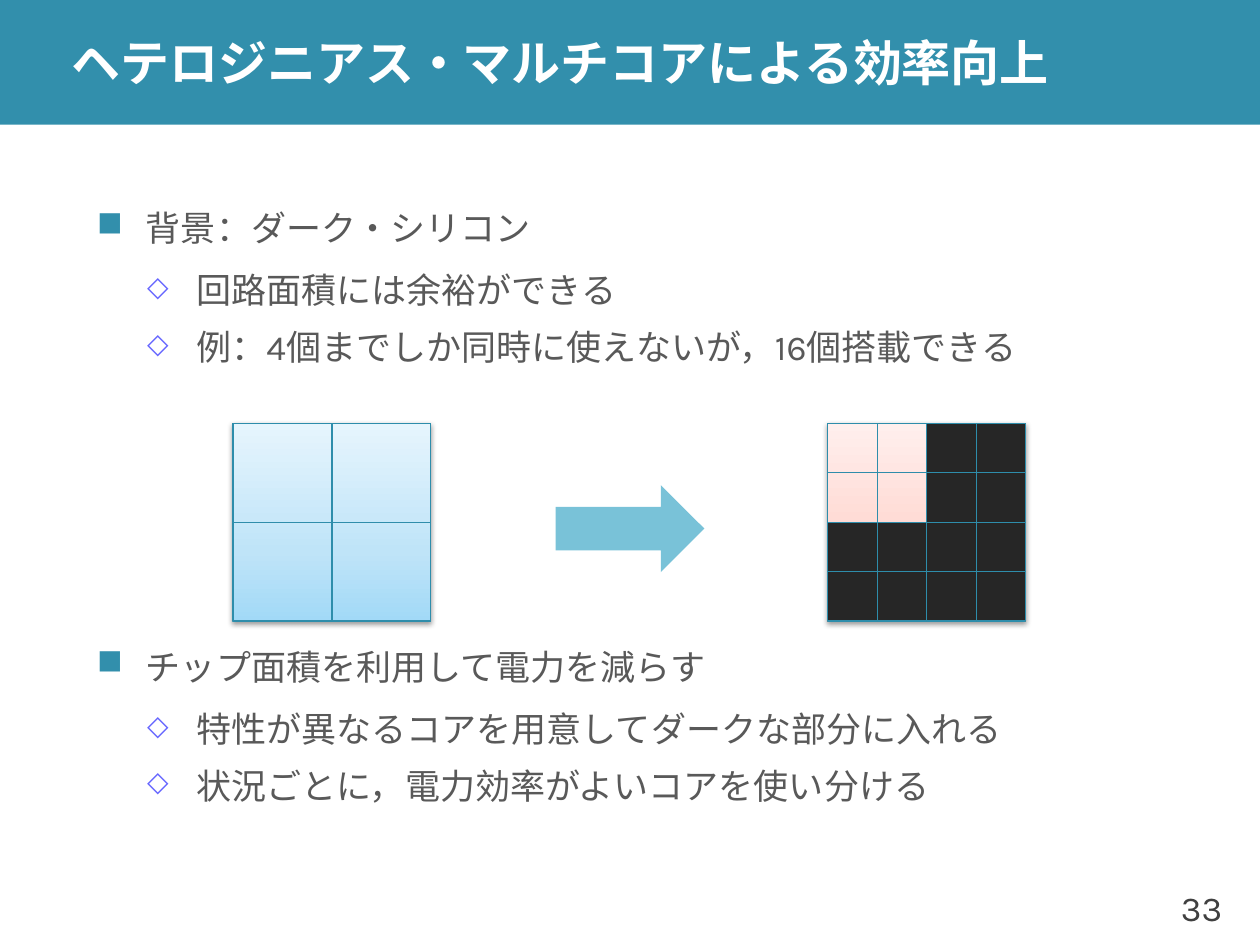
import pptx
import pptx.util
import pptx.oxml
import pptx.oxml.ns
from pptx.dml.color import RGBColor
from pptx.enum.shapes import MSO_SHAPE
from pptx.enum.text import MSO_ANCHOR, PP_ALIGN
from pptx.util import Inches

FONT = "Karla"
COLORS = {
    "teal": "328FAC", "grid": "2E8DAB", "arrow": "79C2D8", "orange": "F4652F",
    "dark": "262626", "body": "595959", "number": "404040", "white": "FFFFFF",
    "diamond": "6666FF",
}
TITLE = "ヘテロジニアス・マルチコアによる効率向上"
PAGE_NUMBER = "33"
# top of each group, heading, points
GROUPS = [
    (1.61, "背景：ダーク・シリコン",
     ["回路面積には余裕ができる",
      "例：4個までしか同時に使えないが，16個搭載できる"]),
    (5.09, "チップ面積を利用して電力を減らす",
     ["特性が異なるコアを用意してダークな部分に入れる",
      "状況ごとに，電力効率がよいコアを使い分ける"]),
]
CHIP_TOP, CHIP_SIZE, LIT_PER_SIDE = 3.36, 1.57, 2
# left, cores per side, outline, gradient from bottom to top
CHIPS = [
    (1.85, 2, "grid", [(0, "A2D9F7"), (35, "BFE4F8"), (100, "E6F5FD")]),
    (6.57, 4, "orange", [(0, "FFC3BA"), (35, "FFD5CE"), (100, "FFEFED")]),
]
HEADING = dict(bullet="■", bullet_color="teal", indent=0.39, after=6)
POINT = dict(bullet="◇", bullet_color="diamond", bullet_size=80,
             indent=0.79, level=1, before=3, after=3)
HANGING = 0.39


def rgb(name):
    return RGBColor.from_string(COLORS[name])


def add_xml(parent, xml):
    """Append DrawingML given with the a: prefix."""
    head, rest = xml.split(">", 1) if not xml.split(">", 1)[0].endswith("/") else (xml[:-2], None)
    declared = f"{head} {pptx.oxml.ns.nsdecls('a')}"
    parent.append(pptx.oxml.parse_xml(declared + ("/>" if rest is None else ">" + rest)))


def text_frame(slide, left, top, width, height, anchor, margin=0.0, wrap=True):
    frame = slide.shapes.add_textbox(*map(Inches, (left, top, width, height))).text_frame
    frame.word_wrap = wrap
    frame.vertical_anchor = anchor
    frame.margin_left = frame.margin_right = Inches(margin)
    frame.margin_top = frame.margin_bottom = 0
    return frame


def write(frame, text, size=20, color="body", bold=False, align=PP_ALIGN.LEFT,
          bullet=None, bullet_color=None, bullet_size=100, indent=0, level=0,
          spacing=1.0, before=0, after=0):
    paragraph = frame.paragraphs[0]
    if paragraph.runs:
        paragraph = frame.add_paragraph()
    paragraph.alignment = align
    paragraph.level = level
    paragraph.line_spacing = spacing
    paragraph.space_before = pptx.util.Pt(before)
    paragraph.space_after = pptx.util.Pt(after)
    if bullet:
        properties = paragraph._p.get_or_add_pPr()
        properties.set("marL", str(Inches(indent)))
        properties.set("indent", str(-Inches(HANGING)))
        add_xml(properties, f'<a:buClr><a:srgbClr val="{COLORS[bullet_color]}"/></a:buClr>')
        add_xml(properties, f'<a:buSzPct val="{bullet_size * 1000}"/>')
        add_xml(properties, f'<a:buChar char="{bullet}"/>')
    run = paragraph.add_run()
    run.text = text
    run.font.name = FONT
    run.font.size = pptx.util.Pt(size)
    run.font.bold = bold
    run.font.color.rgb = rgb(color)
    add_xml(run._r.get_or_add_rPr(), f'<a:ea typeface="{FONT}"/>')


def add_block(slide, left, top, width, height, fill=None, line=None,
              kind=MSO_SHAPE.RECTANGLE):
    block = slide.shapes.add_shape(kind, *map(Inches, (left, top, width, height)))
    block.shadow.inherit = False
    if fill:
        block.fill.solid()
        block.fill.fore_color.rgb = rgb(fill)
    else:
        block.fill.background()
    if line:
        block.line.color.rgb = rgb(line)
        block.line.width = pptx.util.Pt(0.75)
    else:
        block.line.fill.background()
    return block


def shade(block, stops):
    """Give a block a vertical gradient and a soft shadow below it."""
    block.fill.gradient()
    gradient = block._element.spPr.find(pptx.oxml.ns.qn("a:gradFill"))
    for child in list(gradient):
        gradient.remove(child)
    marks = "".join(f'<a:gs pos="{place * 1000}"><a:srgbClr val="{color}"/></a:gs>'
                    for place, color in stops)
    add_xml(gradient, f"<a:gsLst>{marks}</a:gsLst>")
    add_xml(gradient, '<a:lin ang="16200000" scaled="0"/>')
    effects = block._element.spPr.find(pptx.oxml.ns.qn("a:effectLst"))
    blur, distance = pptx.util.Pt(3.1), pptx.util.Pt(1.6)
    add_xml(effects, f'<a:outerShdw blurRad="{blur}" dist="{distance}" dir="5400000" '
                     'rotWithShape="0"><a:srgbClr val="000000"><a:alpha val="38000"/>'
                     "</a:srgbClr></a:outerShdw>")


def add_chip(slide, left, cores, outline, stops):
    """Draw a chip; cores outside the lit corner are dark."""
    shade(add_block(slide, left, CHIP_TOP, CHIP_SIZE, CHIP_SIZE, line=outline), stops)
    side = CHIP_SIZE / cores
    for row in range(cores):
        for column in range(cores):
            lit = max(row, column) < LIT_PER_SIDE
            add_block(slide, left + column * side, CHIP_TOP + row * side, side, side,
                      fill=None if lit else "dark", line="grid")


def main():
    deck = pptx.Presentation()
    deck.slide_width, deck.slide_height = Inches(10), Inches(7.5)
    slide = deck.slides.add_slide(deck.slide_layouts[6])

    add_block(slide, 0, 0, 10, 0.99, fill="teal")
    write(text_frame(slide, 0.47, 0, 9.53, 0.99, MSO_ANCHOR.MIDDLE, margin=0.1),
          TITLE, size=28, color="white", bold=True)
    write(text_frame(slide, 9.13, 6.9, 0.67, 0.6, MSO_ANCHOR.MIDDLE, margin=0.1, wrap=False),
          PAGE_NUMBER, color="number", align=PP_ALIGN.RIGHT)

    for top, heading, points in GROUPS:
        frame = text_frame(slide, 0.67, top, 8.76, 1.5, MSO_ANCHOR.TOP, margin=0.1)
        write(frame, heading, spacing=1.1, **HEADING)
        for point in points:
            write(frame, point, spacing=1.1, **POINT)

    for chip in CHIPS:
        add_chip(slide, *chip)
    add_block(slide, 4.41, 3.85, 1.18, 0.69, fill="arrow", kind=MSO_SHAPE.RIGHT_ARROW)

    deck.save("out.pptx")


if __name__ == "__main__":
    main()
